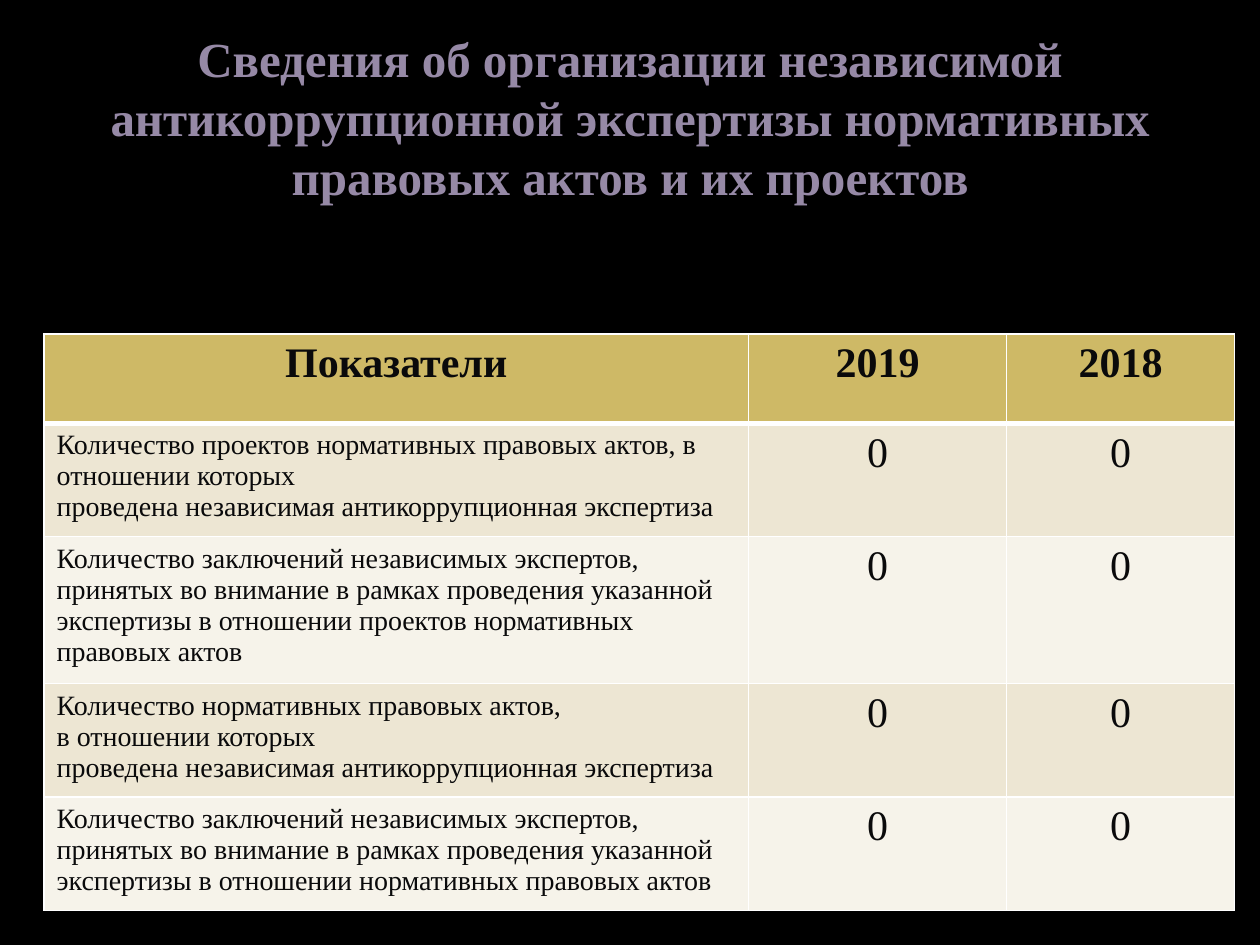
from lxml.etree import SubElement
from pptx import Presentation
from pptx.dml.color import RGBColor as RGB
from pptx.enum.text import MSO_ANCHOR as Anchor, PP_ALIGN as Align
from pptx.oxml.ns import qn
from pptx.util import Inches, Pt

COLORS = {
    "background": "000000",
    "title": "9689A6",
    "text": "0A0A0B",
    "header": "CEB966",
    "odd_row": "EDE6D3",
    "even_row": "F6F3EA",
    "border": "FFFFFF",
}
FORMATS = {
    "title": {"size": Pt(28), "bold": True},
    "header": {"size": Pt(24), "bold": True},
    "indicator": {"size": Pt(16), "bold": False},
    "value": {"size": Pt(24), "bold": False},
}

TITLE = ("Сведения об организации независимой антикоррупционной экспертизы "
         "нормативных правовых актов и их проектов")
HEADERS = ["Показатели", "2019", "2018"]
EXAMINED = "проведена независимая антикоррупционная экспертиза"
CONCLUSIONS = ("Количество заключений независимых экспертов, принятых во внимание "
               "в рамках проведения указанной экспертизы в отношении ")
INDICATORS = [
    ["Количество проектов нормативных правовых актов, в отношении которых", EXAMINED],
    [CONCLUSIONS + "проектов нормативных правовых актов"],
    ["Количество нормативных правовых актов,", "в отношении которых", EXAMINED],
    [CONCLUSIONS + "нормативных правовых актов"],
]
ROWS = [[[header] for header in HEADERS]]
ROWS += [[indicator, ["0"], ["0"]] for indicator in INDICATORS]
COLUMN_WIDTHS = [5.59, 2.05, 1.81]
ROW_HEIGHTS = [0.71, 0.86, 1.11, 0.86, 0.86]


class SlideBuilder:
    """Holds the font and the slide that elements are added to."""

    def __init__(self, slide, font_name):
        self.slide = slide
        self.font_name = font_name

    def background(self, color):
        fill = self.slide.background.fill
        fill.solid()
        fill.fore_color.rgb = RGB.from_string(COLORS[color])

    def paragraphs(self, frame, lines, style, color, align):
        """Put each line in its own paragraph."""
        for index, line in enumerate(lines):
            paragraph = frame.add_paragraph() if index else frame.paragraphs[0]
            paragraph.alignment = align
            run = paragraph.add_run()
            run.text = line
            run.font.name = self.font_name
            run.font.color.rgb = RGB.from_string(COLORS[color])
            for name, value in FORMATS[style].items():
                setattr(run.font, name, value)

    def title(self, text, left, top, width, height):
        box = self.slide.shapes.add_textbox(
            Inches(left), Inches(top), Inches(width), Inches(height))
        frame = box.text_frame
        frame.word_wrap = True
        frame.vertical_anchor = Anchor.MIDDLE
        self.paragraphs(frame, [text], "title", "title", Align.CENTER)

    def borders(self, cell, widths):
        properties = cell._tc.get_or_add_tcPr()
        for side, width in widths.items():
            line = SubElement(properties, qn(f"a:ln{side}"), w=str(Pt(width)))
            fill = SubElement(line, qn("a:solidFill"))
            SubElement(fill, qn("a:srgbClr"), val=COLORS["border"])

    def cell(self, cell, lines, row, column):
        is_header = row == 0
        self.borders(cell, {"L": 1, "R": 1, "T": 3 if row == 1 else 1,
                            "B": 3 if is_header else 1})
        band = "header" if is_header else "odd_row" if row % 2 else "even_row"
        cell.fill.solid()
        cell.fill.fore_color.rgb = RGB.from_string(COLORS[band])
        is_indicator = column == 0 and not is_header
        style = "header" if is_header else "indicator" if is_indicator else "value"
        align = Align.LEFT if is_indicator else Align.CENTER
        self.paragraphs(cell.text_frame, lines, style, "text", align)

    def table(self, rows, left, top, widths, heights):
        table = self.slide.shapes.add_table(
            len(heights), len(widths), Inches(left), Inches(top),
            Inches(sum(widths)), Inches(sum(heights))).table
        for column, width in zip(table.columns, widths):
            column.width = Inches(width)
        for row, height in zip(table.rows, heights):
            row.height = Inches(height)
        for row, cells in enumerate(rows):
            for column, lines in enumerate(cells):
                self.cell(table.cell(row, column), lines, row, column)


def main():
    presentation = Presentation()
    presentation.slide_width = Inches(10)
    presentation.slide_height = Inches(7.5)
    slide = presentation.slides.add_slide(presentation.slide_layouts[6])
    builder = SlideBuilder(slide, "Times New Roman")
    builder.background("background")
    builder.title(TITLE, 0.5, 0.3, 9, 1.25)
    builder.table(ROWS, 0.35, 2.65, COLUMN_WIDTHS, ROW_HEIGHTS)
    presentation.save("out.pptx")


if __name__ == "__main__":
    main()
